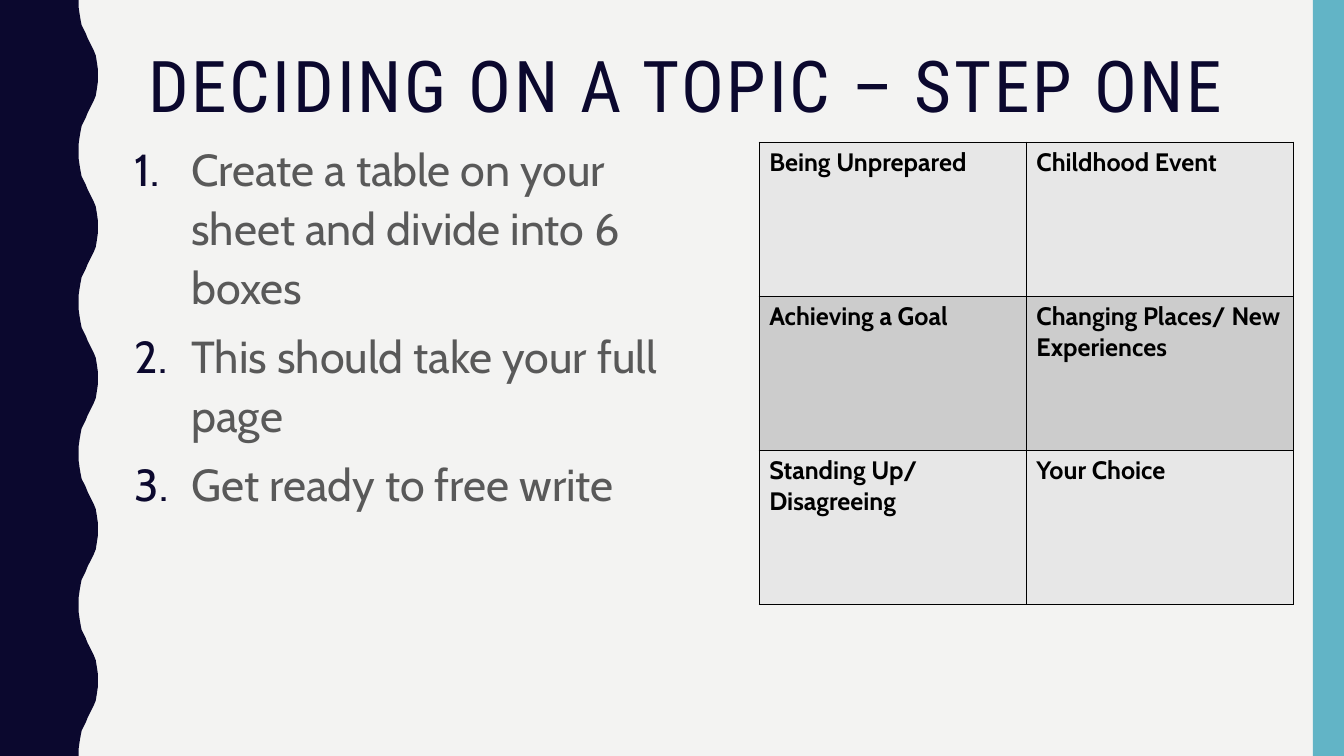
from dataclasses import dataclass

from lxml import etree
from pptx import Presentation
from pptx import util as u
from pptx.dml.color import RGBColor
from pptx.enum import shapes, text
from pptx.oxml.ns import qn


@dataclass(frozen=True)
class Theme:
    """Colours, fonts and type sizes of the slide."""
    paper: str = "F3F3F2"
    navy: str = "0B082E"
    teal: str = "62B4C6"
    grey: str = "595959"
    black: str = "000000"
    bands: tuple = ("E7E7E7", "CCCCCC")
    heading_font: str = "Roboto Condensed"
    body_font: str = "Cabin"
    title_size: int = 51
    step_size: int = 32
    topic_size: int = 18


def paint(fill, colour):
    """Fill with one solid colour."""
    fill.solid()
    fill.fore_color.rgb = RGBColor.from_string(colour)


def write(paragraph, words, *, font, size, colour, bold=False, tracking=0, leading=1.0, before=0):
    """Write words into a paragraph with the given format."""
    paragraph.alignment = text.PP_ALIGN.LEFT
    paragraph.line_spacing = leading
    paragraph.space_before = u.Pt(before)
    run = paragraph.add_run()
    run.text = words
    run.font.name, run.font.size, run.font.bold = font, u.Pt(size), bold
    run.font.color.rgb = RGBColor.from_string(colour)
    if tracking:
        run.font._element.set("spc", str(tracking * 100))


def number(paragraph, indent, colour, font):
    """Give a paragraph an automatic number with a hanging indent."""
    props = paragraph._p.get_or_add_pPr()
    props.set("marL", str(indent))
    props.set("indent", str(-indent))
    bullet_colour = etree.SubElement(props, qn("a:buClr"))
    etree.SubElement(bullet_colour, qn("a:srgbClr"), val=colour)
    etree.SubElement(props, qn("a:buFont"), typeface=font)
    etree.SubElement(props, qn("a:buAutoNum"), type="arabicPeriod")


def outline(cell, colour, width):
    """Draw all four borders of a table cell."""
    props = cell._tc.get_or_add_tcPr()
    for place, side in enumerate(("a:lnL", "a:lnR", "a:lnT", "a:lnB")):
        line = etree.Element(qn(side), w=str(u.Pt(width)))
        solid = etree.SubElement(line, qn("a:solidFill"))
        etree.SubElement(solid, qn("a:srgbClr"), val=colour)
        props.insert(place, line)


class Builder:
    """Holds the theme and the current slide."""

    def __init__(self, slide, theme):
        """Start on a slide and paint its background."""
        self.slide, self.theme = slide, theme
        paint(slide.background.fill, theme.paper)

    def finish(self, shape, colour):
        """Give a shape a plain fill without line or shadow."""
        paint(shape.fill, colour)
        shape.line.fill.background()
        shape.shadow.inherit = False

    def wave(self, rise, period, count, height, colour):
        """Draw the left band with a repeating wavy edge."""
        crest = rise + [(x, period - y) for x, y in rise[-2:0:-1]]
        edge = [(x, y + period * turn) for turn in range(count) for x, y in crest]
        points = edge + [(rise[0][0], height), (0, height)]
        band = self.slide.shapes.build_freeform(0, 0, scale=1.0)
        band.add_line_segments([(u.Inches(x), u.Inches(y)) for x, y in points], close=True)
        self.finish(band.convert_to_shape(), colour)

    def bar(self, box, colour):
        """Draw a plain rectangle."""
        kind = shapes.MSO_SHAPE.RECTANGLE
        self.finish(self.slide.shapes.add_shape(kind, *map(u.Inches, box)), colour)

    def frame(self, box, top_inset=0.05):
        """Add a wrapping text box and return its text frame."""
        frame = self.slide.shapes.add_textbox(*map(u.Inches, box)).text_frame
        frame.word_wrap = True
        frame.vertical_anchor = text.MSO_ANCHOR.TOP
        frame.margin_top = u.Inches(top_inset)
        return frame

    def title(self, box, words):
        """Write the slide title."""
        t = self.theme
        write(self.frame(box, 0.08).paragraphs[0], words, font=t.heading_font,
              size=t.title_size, colour=t.navy, tracking=2, leading=0.9)

    def steps(self, box, steps):
        """Write the numbered steps."""
        t = self.theme
        frame = self.frame(box)
        for index, step in enumerate(steps):
            paragraph = frame.add_paragraph() if index else frame.paragraphs[0]
            write(paragraph, step, font=t.body_font, size=t.step_size,
                  colour=t.grey, leading=1.1, before=7)
            number(paragraph, u.Inches(0.56), t.navy, t.body_font)

    def topics(self, box, rows):
        """Draw the table of topics with alternating row fills."""
        t = self.theme
        table = self.slide.shapes.add_table(len(rows), len(rows[0]), *map(u.Inches, box)).table
        table.first_row = table.horz_banding = False
        for r, row in enumerate(rows):
            for c, topic in enumerate(row):
                cell = table.cell(r, c)
                paint(cell.fill, t.bands[r % 2])
                outline(cell, t.black, 1)
                write(cell.text_frame.paragraphs[0], topic, font=t.body_font,
                      size=t.topic_size, colour=t.black, bold=True)


RISE = [(0.78, 0), (0.78, 0.07), (0.79, 0.14), (0.8, 0.2), (0.81, 0.25),
        (0.83, 0.29), (0.85, 0.33), (0.87, 0.38), (0.89, 0.42), (0.91, 0.46),
        (0.93, 0.5), (0.95, 0.55), (0.96, 0.61), (0.97, 0.68), (0.97, 0.75)]
STEPS = ["Create a table on your sheet and divide into 6 boxes",
         "This should take your full page",
         "Get ready to free write"]
TOPICS = [("Being Unprepared", "Childhood Event"),
          ("Achieving a Goal", "Changing Places/ New Experiences"),
          ("Standing Up/ Disagreeing", "Your Choice")]


def main():
    """Build the slide and save it."""
    deck = Presentation()
    deck.slide_width, deck.slide_height = u.Inches(13.33), u.Inches(7.5)
    theme = Theme()
    page = Builder(deck.slides.add_slide(deck.slide_layouts[6]), theme)
    page.wave(RISE, period=1.5, count=5, height=7.5, colour=theme.navy)
    page.bar((13.02, 0, 0.31, 7.5), theme.teal)
    page.title((1.37, 0.42, 11.13, 0.99), "DECIDING ON A TOPIC – STEP ONE")
    page.steps((1.24, 1.3, 5.96, 3.28), STEPS)
    page.topics((7.53, 1.41, 5.3, 4.59), TOPICS)
    deck.save("out.pptx")


if __name__ == "__main__":
    main()
